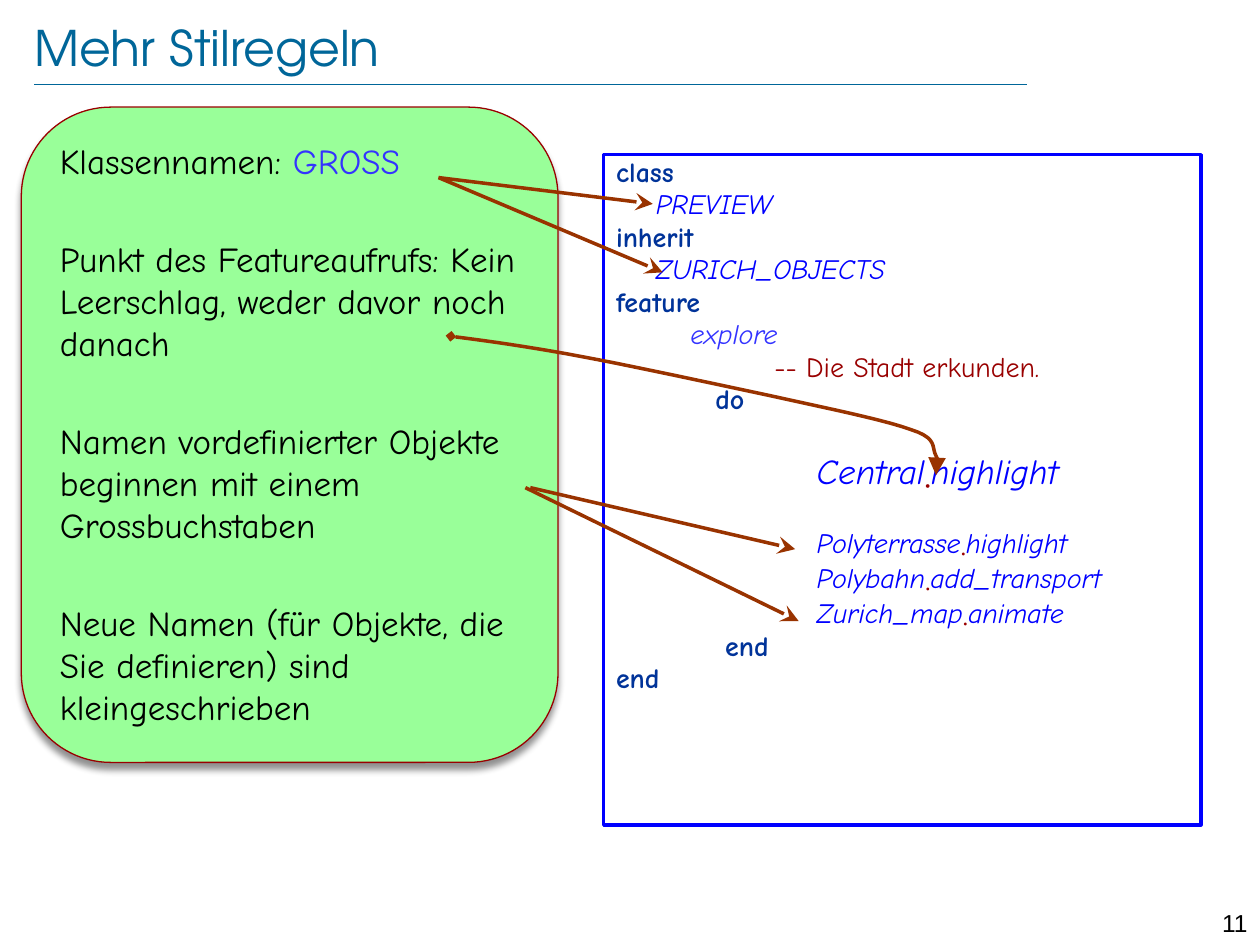
from lxml import etree
from pptx import Presentation
from pptx import util as u
from pptx.dml.color import RGBColor
from pptx.enum import shapes, text
from pptx.oxml import ns

# Colours
TEAL = RGBColor(0x00, 0x66, 0x99)
BLACK = RGBColor(0x00, 0x00, 0x00)
GREEN = RGBColor(0x99, 0xFF, 0x99)
DARK_RED = RGBColor(0x99, 0x00, 0x00)
BROWN = RGBColor(0x99, 0x33, 0x00)
NAVY = RGBColor(0x00, 0x33, 0x99)
BLUE = RGBColor(0x00, 0x00, 0xFF)
VIOLET = RGBColor(0x33, 0x33, 0xFF)

BODY_FONT = "Comic Neue"
TITLE_FONT = "TeX Gyre Adventor"

# Code styles: colour, bold, italic
KEYWORD = (NAVY, True, False)
NAME = (BLUE, False, True)
FEATURE = (VIOLET, False, True)
COMMENT = (DARK_RED, False, False)
DOT = (DARK_RED, False, False)
CODE_SIZE = 16

RULES = [
    [("Klassennamen: ", BLACK), ("GROSS", VIOLET)],
    [("Punkt des Featureaufrufs: Kein Leerschlag, weder davor noch danach", BLACK)],
    [("Namen vordefinierter Objekte beginnen mit einem Grossbuchstaben", BLACK)],
    [("Neue Namen (für Objekte, die Sie definieren) sind kleingeschrieben", BLACK)],
]


def call(target, feature):
    return [("\t        ", COMMENT), (target, NAME), ("•", DOT), (feature, NAME)]


# Code lines: spans, text size, space before
CODE = [
    ([("class", KEYWORD)], CODE_SIZE, 0),
    ([("    ", KEYWORD), ("PREVIEW", NAME)], CODE_SIZE, 3.2),
    ([("inherit", KEYWORD)], CODE_SIZE, 3.2),
    ([("    ", KEYWORD), ("ZURICH_OBJECTS", NAME)], CODE_SIZE, 3.2),
    ([("feature", KEYWORD)], CODE_SIZE, 3.2),
    ([("        explore", FEATURE)], CODE_SIZE, 3.2),
    ([("                 -- Die Stadt erkunden.", COMMENT)], CODE_SIZE, 3.2),
    ([("          do", KEYWORD)], CODE_SIZE, 3.2),
    (call("Central", "highlight"), 20, 22.6),
    (call("Polyterrasse", "highlight"), CODE_SIZE, 21.8),
    (call("Polybahn", "add_transport"), CODE_SIZE, 3.2),
    (call("Zurich_map", "animate"), CODE_SIZE, 3.2),
    ([("           end", KEYWORD)], CODE_SIZE, 3.2),
    ([("end", KEYWORD)], CODE_SIZE, 3.2),
]

# Arrows from a rule to the code: x1, y1, x2, y2 in cm
ARROWS = [
    (8.84, 3.58, 13.16, 4.11),
    (8.84, 3.58, 13.36, 5.49),
    (10.59, 9.83, 16.1, 12.52),
    (10.69, 9.83, 16.03, 11.07),
]

# Bézier points in cm: a start, then two handles and an end per piece
CURVE = [
    (9.09, 6.78),
    (9.86, 6.88), (10.67, 6.99), (11.73, 7.19),
    (12.8, 7.39), (14.45, 7.75), (15.54, 7.98),
    (16.66, 8.23), (17.81, 8.46), (18.36, 8.66),
    (18.92, 8.84), (18.77, 9.02), (18.87, 9.19),
    (18.95, 9.35), (18.9, 9.45), (18.87, 9.58),
]


def set_line(shape, color, width):
    shape.line.color.rgb = color
    shape.line.width = u.Pt(width)


def add_head(shape, end, kind, size):
    line = shape.line._get_or_add_ln()
    etree.SubElement(line, ns.qn(f"a:{end}"), type=kind, w=size, len=size)


def add_panel(page, kind, place, color, width):
    panel = page.shapes.add_shape(kind, *map(u.Cm, place))
    panel.shadow.inherit = False
    panel.fill.background()
    set_line(panel, color, width)
    panel.text_frame.word_wrap = True
    panel.text_frame.vertical_anchor = text.MSO_ANCHOR.TOP
    return panel


def add_para(frame, first, size, before, tab=None):
    para = frame.paragraphs[0] if first else frame.add_paragraph()
    para.alignment = text.PP_ALIGN.LEFT
    para.space_before = u.Pt(before)
    if tab:
        stops = etree.SubElement(para._p.get_or_add_pPr(), ns.qn("a:tabLst"))
        etree.SubElement(stops, ns.qn("a:tab"), pos=str(u.Cm(tab)), algn="l")
    para.font.name = BODY_FONT
    para.font.size = u.Pt(size)
    return para


def add_span(para, words, color):
    span = para.add_run()
    span.text = words
    span.font.color.rgb = color
    return span


def add_label(page, place, words, font, size, color):
    box = page.shapes.add_textbox(*map(u.Cm, place))
    box.text_frame.word_wrap = True
    para = box.text_frame.paragraphs[0]
    para.text = words
    para.font.name = font
    para.font.size = u.Pt(size)
    para.font.color.rgb = color
    return box


def add_straight(page, ends, color, width):
    line = page.shapes.add_connector(shapes.MSO_CONNECTOR.STRAIGHT, *map(u.Cm, ends))
    set_line(line, color, width)
    etree.SubElement(line._element.spPr, ns.qn("a:effectLst"))
    return line


def add_curve(page, points, steps=10):
    track = []
    for i in range(0, len(points) - 1, 3):
        piece = points[i:i + 4]
        for step in range(1, steps + 1):
            t = step / steps
            weights = ((1 - t) ** 3, 3 * t * (1 - t) ** 2, 3 * t * t * (1 - t), t ** 3)
            track.append([u.Cm(sum(w * p[axis] for w, p in zip(weights, piece)))
                          for axis in (0, 1)])
    builder = page.shapes.build_freeform(*map(u.Cm, points[0]))
    builder.add_line_segments(track, close=False)
    curve = builder.convert_to_shape()
    curve.shadow.inherit = False
    curve.fill.background()
    set_line(curve, BROWN, 2)
    add_head(curve, "headEnd", "diamond", "med")
    add_head(curve, "tailEnd", "triangle", "lg")


def add_drop_shadow(shape):
    effects = shape._element.spPr.find(ns.qn("a:effectLst"))
    shadow = etree.SubElement(effects, ns.qn("a:outerShdw"), blurRad=str(u.Pt(4)),
                              dist=str(u.Pt(4)), dir="5400000", rotWithShape="0")
    color = etree.SubElement(shadow, ns.qn("a:srgbClr"), val="000000")
    etree.SubElement(color, ns.qn("a:alpha"), val="43000")


def add_rules(page):
    panel = add_panel(page, shapes.MSO_SHAPE.ROUNDED_RECTANGLE,
                      (0.43, 2.16, 10.82, 13.21), DARK_RED, 0.75)
    panel.fill.solid()
    panel.fill.fore_color.rgb = GREEN
    add_drop_shadow(panel)
    for i, rule in enumerate(RULES):
        para = add_para(panel.text_frame, i == 0, 20, 32 if i else 0)
        for words, color in rule:
            add_span(para, words, color)


def add_code(page):
    panel = add_panel(page, shapes.MSO_SHAPE.RECTANGLE,
                      (12.17, 3.12, 12.04, 13.51), BLUE, 2)
    for i, (spans, size, before) in enumerate(CODE):
        para = add_para(panel.text_frame, i == 0, size, before, tab=2.54)
        para.line_spacing = 0.8
        for words, (color, bold, italic) in spans:
            span = add_span(para, words, color)
            span.font.bold = bold
            span.font.italic = italic
            if words.isspace():
                span.font.size = u.Pt(CODE_SIZE)
            if words == "•":
                span._r.get_or_add_rPr().set("baseline", "-20000")


def main():
    deck = Presentation()
    deck.slide_width, deck.slide_height = u.Cm(25.4), u.Cm(19.05)
    page = deck.slides.add_slide(deck.slide_layouts[6])

    # Title, rule below it and page number
    add_straight(page, (0.69, 1.7, 20.7, 1.7), TEAL, 0.25)
    title = add_label(page, (0.69, 0.33, 22.07, 1.22), "Mehr Stilregeln",
                      TITLE_FONT, 28, TEAL).text_frame
    title.margin_left = title.margin_right = title.margin_top = title.margin_bottom = 0
    title.vertical_anchor = text.MSO_ANCHOR.MIDDLE
    number = add_label(page, (24, 18.19, 1.4, 0.61), "11", "Arial", 14, BLACK)
    number.text_frame.paragraphs[0].alignment = text.PP_ALIGN.RIGHT

    # Style rules and the code they apply to
    add_rules(page)
    add_code(page)

    # Arrows from rules to code
    for ends in ARROWS:
        add_head(add_straight(page, ends, BROWN, 2), "tailEnd", "stealth", "lg")
    add_curve(page, CURVE)

    deck.save("out.pptx")


if __name__ == "__main__":
    main()
